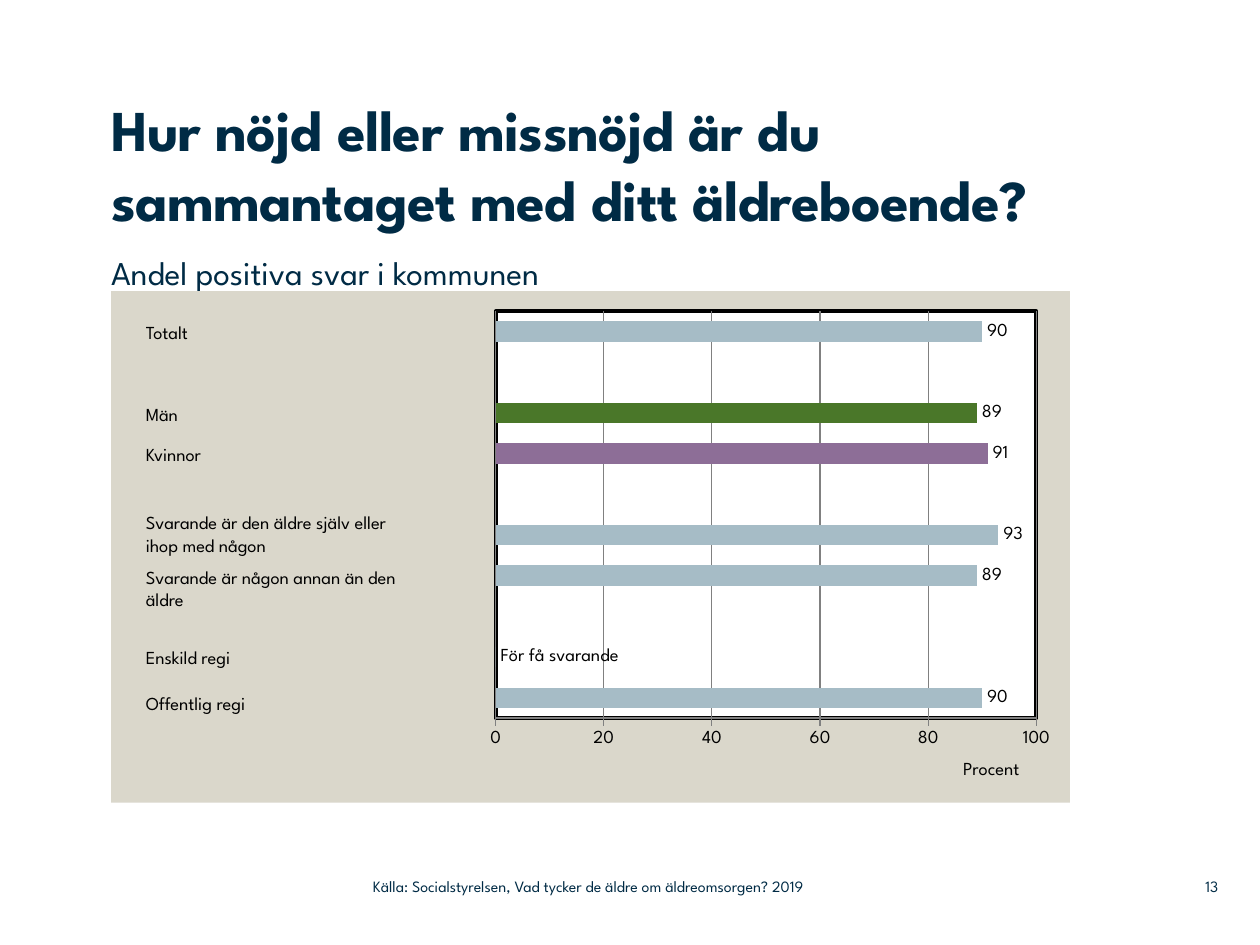
import lxml.etree
import pptx
import pptx.chart.data
import pptx.dml.color
import pptx.enum.chart
import pptx.enum.text
import pptx.oxml
import pptx.oxml.ns
import pptx.util
from pptx.util import Cm, Pt

RGBColor = pptx.dml.color.RGBColor
NAVY = RGBColor(0x00, 0x2B, 0x45)
BLACK = RGBColor(0x00, 0x00, 0x00)
GRID_GREY = RGBColor(0x80, 0x80, 0x80)
BLUE_GREY = RGBColor(0xA6, 0xBC, 0xC6)
GREEN = RGBColor(0x4A, 0x77, 0x29)
PURPLE = RGBColor(0x8D, 0x6E, 0x97)
FONT = "League Spartan"

TITLE = {"size": Pt(33), "bold": True, "color": NAVY}
SUBTITLE = {"size": Pt(19), "color": NAVY}
FOOTER = {"size": Pt(9), "color": NAVY}
LABEL = {"size": Pt(10.5), "color": BLACK}

# Bars from bottom to top: value and colour; None leaves a gap between groups
BARS = [(90, BLUE_GREY), (0, BLUE_GREY), (None, None), (89, BLUE_GREY), (93, BLUE_GREY),
        (None, None), (91, PURPLE), (89, GREEN), (None, None), (90, BLUE_GREY)]
TOO_FEW = 1

# Top, width and lines of each row label, in centimetres
ROW_LABELS = [
    (6.35, 1.65, ["Totalt"]),
    (8.0, 1.32, ["Män"]),
    (8.81, 1.83, ["Kvinnor"]),
    (10.19, 6.43, ["Svarande är den äldre själv eller", "ihop med någon"]),
    (11.28, 6.73, ["Svarande är någon annan än den", "äldre"]),
    (12.9, 2.46, ["Enskild regi"]),
    (13.82, 2.87, ["Offentlig regi"]),
]


def format_font(font, values):
    font.name = FONT
    for name, value in values.items():
        if name == "color":
            font.color.rgb = value
        else:
            setattr(font, name, value)


def add_text(slide, box, lines, values, inset=True, anchor="TOP", align="LEFT"):
    shape = slide.shapes.add_textbox(*[Cm(length) for length in box])
    frame = shape.text_frame
    frame.word_wrap = True
    frame.vertical_anchor = getattr(pptx.enum.text.MSO_ANCHOR, anchor)
    if not inset:
        for side in ("left", "top", "right", "bottom"):
            setattr(frame, f"margin_{side}", 0)
    frame.text = "\n".join(lines)
    for paragraph in frame.paragraphs:
        paragraph.alignment = getattr(pptx.enum.text.PP_ALIGN, align)
        for run in paragraph.runs:
            format_font(run.font, values)
    return shape


def set_layout(element, index, **values):
    """Place a chart part by hand, in fractions of the chart."""
    for old in element.findall(pptx.oxml.ns.qn("c:layout")):
        element.remove(old)
    layout = lxml.etree.Element(pptx.oxml.ns.qn("c:layout"))
    manual = lxml.etree.SubElement(layout, pptx.oxml.ns.qn("c:manualLayout"))
    for name, value in values.items():
        lxml.etree.SubElement(manual, pptx.oxml.ns.qn(f"c:{name}")).set("val", str(value))
    element.insert(index, layout)


def area_format(fill, line=""):
    """Shape properties for a chart area, which has no public fill."""
    outline = f'<a:ln w="{Pt(2.25)}"><a:solidFill><a:srgbClr val="{line}"/></a:solidFill></a:ln>'
    return pptx.oxml.parse_xml(
        f'<c:spPr {pptx.oxml.ns.nsdecls("c", "a")}>'
        f'<a:solidFill><a:srgbClr val="{fill}"/></a:solidFill>'
        f'{outline if line else "<a:ln><a:noFill/></a:ln>"}</c:spPr>')


def format_axes(chart):
    chart.category_axis.visible = False
    axis = chart.value_axis
    settings = {
        "minimum_scale": 0, "maximum_scale": 100, "major_unit": 20,
        "has_major_gridlines": True, "has_title": True,
        "major_tick_mark": pptx.enum.chart.XL_TICK_MARK.OUTSIDE,
    }
    for name, value in settings.items():
        setattr(axis, name, value)
    for line in (axis.major_gridlines.format.line, axis.format.line):
        line.color.rgb = GRID_GREY
        line.width = Pt(0.75)
    format_font(axis.tick_labels.font, LABEL)
    title = axis.axis_title
    title.text_frame.text = "Procent"
    format_font(title.text_frame.paragraphs[0].runs[0].font, {**LABEL, "bold": False})
    set_layout(title._element, 1, xMode="edge", yMode="edge", x=0.885, y=0.91)


def format_bars(plot):
    plot.gap_width = 100
    plot.vary_by_categories = False
    series = plot.series[0]
    series.format.fill.solid()
    series.format.fill.fore_color.rgb = GREEN
    for index, (value, color) in enumerate(BARS):
        if value is not None and color != GREEN:
            fill = series.points[index].format.fill
            fill.solid()
            fill.fore_color.rgb = color

    outside = pptx.enum.chart.XL_LABEL_POSITION.OUTSIDE_END
    labels = series.data_labels
    labels.show_value = True
    labels.position = outside
    format_font(labels.font, LABEL)
    too_few = series.points[TOO_FEW].data_label
    too_few.text_frame.text = "För få svarande"
    too_few.position = outside
    format_font(too_few.text_frame.paragraphs[0].runs[0].font, LABEL)


def add_satisfaction_chart(slide):
    data = pptx.chart.data.CategoryChartData()
    data.categories = [str(number) for number in range(1, len(BARS) + 1)]
    data.add_series("Andel positiva svar", [value for value, _ in BARS])
    chart = slide.shapes.add_chart(
        pptx.enum.chart.XL_CHART_TYPE.BAR_CLUSTERED,
        Cm(2.24), Cm(5.87), Cm(19.33), Cm(10.31), data).chart
    chart.has_legend = False
    chart.has_title = False
    format_font(chart.font, LABEL)
    format_axes(chart)
    format_bars(chart.plots[0])

    chart_element = chart._chartSpace.find(pptx.oxml.ns.qn("c:chart"))
    chart_element.addnext(area_format("DAD7CB"))
    plot_area = chart_element.find(pptx.oxml.ns.qn("c:plotArea"))
    set_layout(plot_area, 0, layoutTarget="inner", xMode="edge", yMode="edge",
               x=0.401, y=0.039, w=0.564, h=0.796)
    plot_area.append(area_format("FFFFFF", "000000"))


def main():
    presentation = pptx.Presentation()
    presentation.slide_width = Cm(25.4)
    presentation.slide_height = Cm(19.05)
    slide = presentation.slides.add_slide(presentation.slide_layouts[6])

    title = add_text(slide, (2.24, 1.9, 21.23, 3.6),
                     ["Hur nöjd eller missnöjd är du\vsammantaget med ditt äldreboende?"],
                     TITLE, inset=False)
    for run in title.text_frame.paragraphs[0].runs:
        run.font._element.set("spc", "-30")
    add_text(slide, (2.24, 5.08, 16.48, 1.14), ["Andel positiva svar i kommunen"],
             SUBTITLE, inset=False)
    add_satisfaction_chart(slide)
    for top, width, lines in ROW_LABELS:
        add_text(slide, (2.69, top, width, 0.71 if len(lines) == 1 else 1.14), lines, LABEL)
    add_text(slide, (23.37, 17.5, 1.19, 0.74), ["13"], FOOTER,
             inset=False, anchor="MIDDLE", align="RIGHT")
    add_text(slide, (7.52, 17.5, 11.25, 0.74),
             ["Källa: Socialstyrelsen, Vad tycker de äldre om äldreomsorgen? 2019"],
             FOOTER, inset=False, anchor="MIDDLE")
    presentation.save("out.pptx")


if __name__ == "__main__":
    main()
